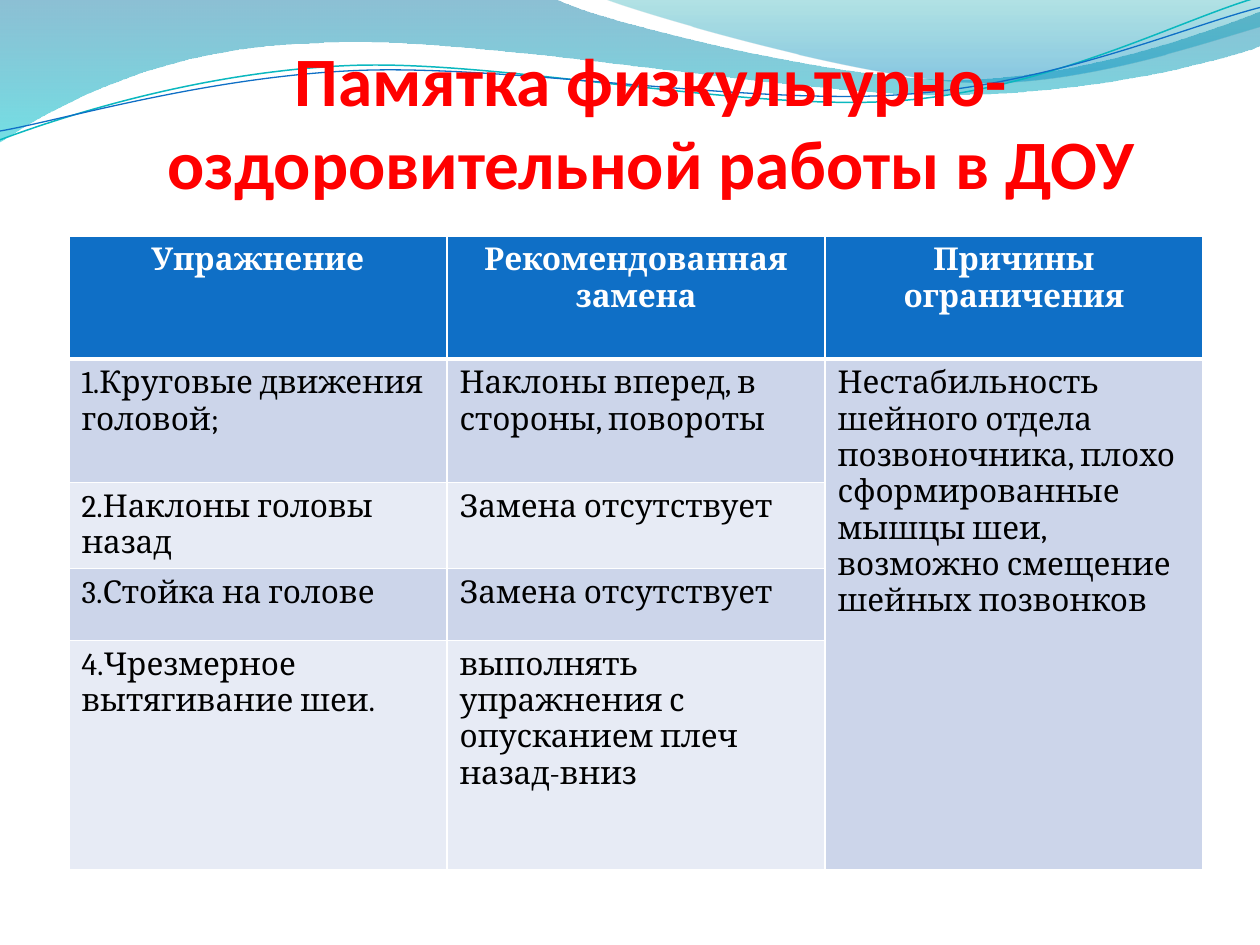
import math
from typing import NamedTuple

import pptx
import pptx.dml.color
import pptx.enum.text
import pptx.oxml
import pptx.oxml.ns
import pptx.util
from pptx.util import Cm, Pt

COLORS = {
    "title": "FF0000",
    "header": "0F6FC6",
    "odd row": "CCD5EA",
    "even row": "E7EBF5",
    "body text": "000000",
    "white": "FFFFFF",
    "teal line": "0AB8BF",
    "blue line": "0F6FC6",
    "wave top": "0074A1",
    "wave bottom": "00C6CF",
    "crest top": "00A1A9",
    "crest bottom": "008BBF",
}
WAVE_UNIT = Cm(2.54)  # wave coordinates are in inches
LINE_TILT = -2.7  # degrees
COLUMN_WIDTH = Cm(7.62)
ROW_HEIGHTS = [Cm(2.48), Cm(2.49), Cm(1.45), Cm(1.45), Cm(4.62)]
ROWS = [
    ["Упражнение", "Рекомендованная замена", "Причины ограничения"],
    ["1.Круговые движения головой;", "Наклоны вперед, в стороны, повороты",
     "Нестабильность шейного отдела позвоночника, плохо сформированные "
     "мышцы шеи, возможно смещение шейных позвонков"],
    ["2.Наклоны головы назад", "Замена отсутствует", ""],
    ["3.Стойка на голове", "Замена отсутствует", ""],
    ["4.Чрезмерное вытягивание шеи.",
     "выполнять упражнения с опусканием плеч назад-вниз", ""],
]


class Stop(NamedTuple):
    position: float
    color: str
    opacity: int  # percent


class Wave(NamedTuple):
    start: tuple
    segments: list  # 2 numbers: straight line; 6 numbers: Bezier curve
    stops: tuple = ()
    line: str = ""
    width: float = 0
    center: tuple = (0, 0)
    tilt: float = 0


WAVES = [
    Wave((0, 0), [
        (4.4, -0.01),
        (4.76, 0.17, 6.64, 0.63, 7.58, 0.63),
        (8.53, 0.63, 9.58, 0.26, 10, 0.09),
        (10.01, 0.36),
        (9.83, 0.44, 8.7, 0.76, 7.46, 0.75),
        (6.22, 0.75, 3.82, 0.28, 2.57, 0.34),
        (1.29, 0.36, 0.46, 0.83, -0.01, 1.13),
        (0, 0),
    ], stops=(Stop(0, "wave top", 45), Stop(1, "wave bottom", 55))),
    Wave((4.79, -0.01), [
        (5.09, 0.11, 6.82, 0.62, 7.69, 0.65),
        (8.56, 0.69, 9.61, 0.32, 10, 0.21),
        (10, 0),
        (4.79, -0.01),
    ], stops=(Stop(0, "crest top", 30), Stop(0.8, "crest bottom", 45))),
    Wave((0, 1.11), [
        (0.48, 0.93, 1.58, 0.57, 2.77, 0.52),
        (3.95, 0.47, 5.93, 0.89, 7.13, 0.8),
        (8.33, 0.71, 9.38, 0.15, 9.98, -0.02),
    ], line="teal line", width=0.85, center=(4.99, 0.57), tilt=LINE_TILT),
    Wave((0, 1.04), [
        (0.47, 0.96, 1.64, 0.61, 2.83, 0.56),
        (4.03, 0.51, 5.97, 0.84, 7.17, 0.75),
        (8.36, 0.67, 9.41, 0.21, 10, 0.06),
    ], line="blue line", width=0.75, center=(5, 0.59), tilt=LINE_TILT),
]


def rgb(name: str) -> pptx.dml.color.RGBColor:
    return pptx.dml.color.RGBColor.from_string(COLORS[name])


def wave_points(wave: Wave) -> list:
    """List all nodes and handles, level before the shape is tilted."""
    points = [wave.start]
    for segment in wave.segments:
        points += zip(segment[::2], segment[1::2])
    cx, cy = wave.center
    cos, sin = (f(math.radians(-wave.tilt)) for f in (math.cos, math.sin))
    return [((cx + (x - cx)*cos - (y - cy)*sin) * WAVE_UNIT,
             (cy + (x - cx)*sin + (y - cy)*cos) * WAVE_UNIT)
            for x, y in points]


def bend(shape, segments: list) -> None:
    """Join each three line steps of a curve into one Bezier step."""
    qn = pptx.oxml.ns.qn
    steps = iter(list(shape.element.iter(qn("a:lnTo"))))
    for segment in segments:
        first = next(steps)
        if len(segment) == 2:
            continue
        curve = pptx.oxml.parse_xml(
            f'<a:cubicBezTo {pptx.oxml.ns.nsdecls("a")}/>')
        first.addprevious(curve)
        for step in (first, next(steps), next(steps)):
            curve.append(step[0])
            step.getparent().remove(step)


def draw_wave(slide, wave: Wave) -> None:
    start, *rest = wave_points(wave)
    builder = slide.shapes.build_freeform(*start)
    builder.add_line_segments(rest, close=bool(wave.stops))
    shape = builder.convert_to_shape()
    bend(shape, wave.segments)
    shape.rotation = wave.tilt
    shape.shadow.inherit = False
    if wave.line:
        shape.fill.background()
        shape.line.color.rgb = rgb(wave.line)
        shape.line.width = Pt(wave.width)
        return
    shape.line.fill.background()
    shape.fill.gradient()
    shape.fill.gradient_angle = 270
    for gradient_stop, stop in zip(shape.fill.gradient_stops, wave.stops):
        gradient_stop.position = stop.position
        gradient_stop.color.rgb = rgb(stop.color)
    # Transparency of the gradient stops
    stop_colors = shape.element.iter(pptx.oxml.ns.qn("a:srgbClr"))
    for color, stop in zip(list(stop_colors), wave.stops):
        color.append(pptx.oxml.parse_xml(
            f'<a:alpha {pptx.oxml.ns.nsdecls("a")} val="{stop.opacity * 1000}"/>'))


def write(frame, text: str, color: str, centered: bool, font: dict) -> None:
    paragraph = frame.paragraphs[0]
    align = pptx.enum.text.PP_ALIGN
    paragraph.alignment = align.CENTER if centered else align.LEFT
    run = paragraph.add_run()
    run.text = text
    for name, value in font.items():
        setattr(run.font, name, value)
    run.font.color.rgb = rgb(color)


def draw_title(slide) -> None:
    title = slide.shapes.add_textbox(Cm(1.7), Cm(1.33), Cm(22.86), Cm(2.77))
    settings = {
        "word_wrap": True,
        "vertical_anchor": pptx.enum.text.MSO_ANCHOR.BOTTOM,
        "margin_left": 0, "margin_right": 0,
        "margin_top": Cm(0.13), "margin_bottom": 0,
    }
    for name, value in settings.items():
        setattr(title.text_frame, name, value)
    write(title.text_frame, "Памятка физкультурно- оздоровительной работы в ДОУ",
          "title", True, {"name": "Calibri", "size": Pt(39.6), "bold": True})


def add_borders(cell, widths: dict) -> None:
    properties = cell._tc.get_or_add_tcPr()
    for side, width in widths.items():
        properties.append(pptx.oxml.parse_xml(
            f'<a:ln{side} {pptx.oxml.ns.nsdecls("a")} w="{Pt(width)}"><a:solidFill>'
            f'<a:srgbClr val="{COLORS["white"]}"/></a:solidFill></a:ln{side}>'))


def draw_table(slide) -> None:
    columns = len(ROWS[0])
    table = slide.shapes.add_table(
        len(ROWS), columns, Cm(1.39), Cm(4.76),
        COLUMN_WIDTH * columns, sum(ROW_HEIGHTS)).table
    for column in table.columns:
        column.width = COLUMN_WIDTH
    for r, (height, texts) in enumerate(zip(ROW_HEIGHTS, ROWS)):
        table.rows[r].height = height
        header = r == 0
        fill = "header" if header else "odd row" if r % 2 else "even row"
        for c, text in enumerate(texts):
            cell = table.cell(r, c)
            add_borders(cell, {"L": 1, "R": 1, "T": 3 if r == 1 else 1,
                               "B": 3 if header else 1})
            cell.margin_bottom = Cm(0.08)
            cell.fill.solid()
            cell.fill.fore_color.rgb = rgb(fill)
            if text:
                write(cell.text_frame, text, "white" if header else "body text",
                      header, {"name": "Cambria", "size": Pt(18), "bold": header})
    # One shared reason for all the exercises
    table.cell(1, 2).merge(table.cell(len(ROWS) - 1, 2))


def main() -> None:
    deck = pptx.Presentation()
    deck.slide_width, deck.slide_height = Cm(25.4), Cm(19.05)
    slide = deck.slides.add_slide(deck.slide_layouts[6])
    # Waves along the top edge
    for wave in WAVES:
        draw_wave(slide, wave)
    draw_title(slide)
    draw_table(slide)
    deck.save("out.pptx")


if __name__ == "__main__":
    main()
